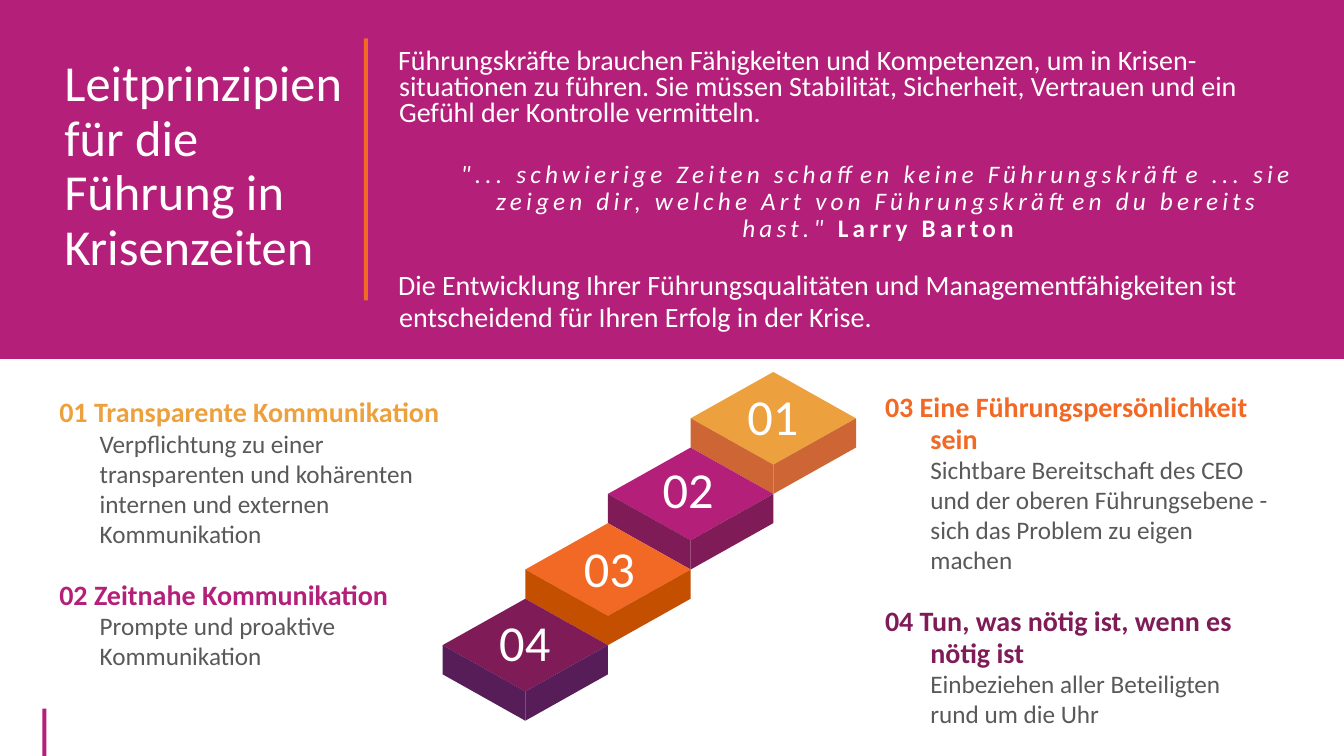
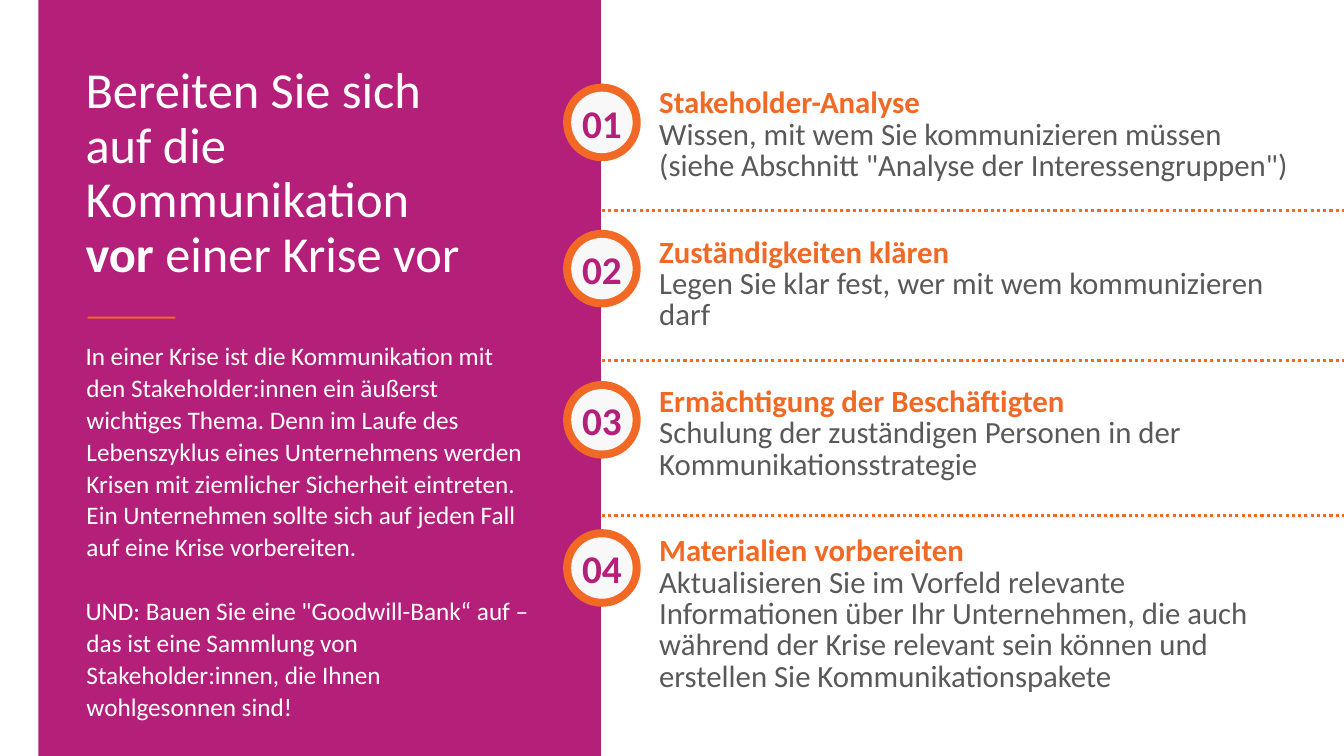
import pptx
import pptx.util
import pptx.dml.color
import pptx.enum.dml
import pptx.enum.shapes
import pptx.enum.text
import pptx.oxml.ns
from lxml import etree

Inches, Pt = pptx.util.Inches, pptx.util.Pt
Shape = pptx.enum.shapes.MSO_SHAPE
Align = pptx.enum.text.PP_ALIGN
Anchor = pptx.enum.text.MSO_ANCHOR

# Shared look
WIDE, HIGH = 13.33, 7.5
HUES = {
    "pink": "B41F7A", "plum": "7F1C58", "dark": "571D58",
    "orange": "F16924", "rust": "C44F00", "gold": "EDA13E",
    "brick": "CD6634", "gray": "595959", "pale": "F8F8F8", "white": "FFFFFF",
}
TITLE = {"size": Pt(36)}
ROW = {"line_spacing": 0.9}


def hue(name):
    return pptx.dml.color.RGBColor.from_string(HUES[name])


def apply(item, attrs):
    for key, value in attrs.items():
        setattr(item, key, value)


# Text parts: a run is (words, font, hue, spacing), a line is (runs, format, indent)
def run(words, tint="white", gap=None, **font):
    return words, font, tint, gap


def line(runs, hang=None, **form):
    return runs, form, hang


def write(frame, lines):
    for num, (runs, form, hang) in enumerate(lines):
        para = frame.paragraphs[0] if num == 0 else frame.add_paragraph()
        if hang:
            props = para._p.get_or_add_pPr()
            props.set("marL", str(Inches(hang[0])))
            props.set("indent", str(Inches(hang[1])))
        apply(para, form)
        for words, font, tint, gap in runs:
            part = para.add_run()
            part.text = words
            apply(part.font, {"name": "Calibri", **font})
            part.font.color.rgb = hue(tint)
            if gap:
                part._r.get_or_add_rPr().set("spc", str(gap * 100))


def text(slide, box, lines):
    frame = slide.shapes.add_textbox(*map(Inches, box)).text_frame
    frame.word_wrap = True
    write(frame, lines)


# Drawn parts
def paint(shape, tint):
    shape.shadow.inherit = False
    shape.fill.solid()
    shape.fill.fore_color.rgb = hue(tint)
    shape.line.fill.background()
    return shape


def block(slide, box, tint, kind=Shape.RECTANGLE):
    return paint(slide.shapes.add_shape(kind, *map(Inches, box)), tint)


def face(slide, points, tint):
    spots = [(Inches(x), Inches(y)) for x, y in points]
    pen = slide.shapes.build_freeform(*spots[0], scale=1.0)
    pen.add_line_segments(spots[1:], close=True)
    paint(pen.convert_to_shape(), tint)


def cube(slide, x, y, top, side):
    half, rise, deep = 0.82, 0.46, 0.29
    left, right = (x - half, y + rise), (x + half, y + rise)
    front = (x, y + 2 * rise)
    face(slide, [(x, y), right, front, left], top)
    for edge in (left, right):
        face(slide, [edge, front, (x, front[1] + deep), (edge[0], edge[1] + deep)], side)


def dots(slide, y):
    rule = slide.shapes.add_connector(
        pptx.enum.shapes.MSO_CONNECTOR.STRAIGHT,
        Inches(5.97), Inches(y), Inches(WIDE), Inches(y))
    apply(rule.line, {"width": Pt(2.25),
                      "dash_style": pptx.enum.dml.MSO_LINE.ROUND_DOT})
    rule.line.color.rgb = hue("orange")
    etree.SubElement(rule._element.spPr, pptx.oxml.ns.qn("a:effectLst"))


def badge(slide, y, mark):
    size, rim = 0.77, 0.08
    left = 5.97 - size / 2
    block(slide, (left, y, size, size), "orange", Shape.OVAL)
    core = size - 2 * rim
    disc = block(slide, (left + rim, y + rim, core, core), "pale", Shape.OVAL)
    apply(disc.text_frame, {
        "margin_left": 0, "margin_right": 0, "margin_top": 0, "margin_bottom": 0,
        "word_wrap": False, "vertical_anchor": Anchor.MIDDLE})
    write(disc.text_frame, [line([run(mark, "pink", size=Pt(28), bold=True)],
                                 alignment=Align.CENTER)])


def points(slide, box, items, hang):
    lines = []
    for num, (head, tint, body) in enumerate(items):
        lines += [
            line([run(head, tint, size=Pt(20), bold=True)], (hang, -hang),
                 line_spacing=Pt(22.4), space_before=Pt(22.4 if num else 0)),
            line([run(body, "gray", size=Pt(18))], (hang, 0), line_spacing=Pt(21.4)),
        ]
    text(slide, box, lines)


def start(deck):
    slide = deck.slides.add_slide(deck.slide_layouts[6])
    block(slide, (0.42, 7.03, 0.04, 0.47), "pink")
    return slide


# Slide 1: guiding principles
def guide(deck):
    slide = start(deck)
    block(slide, (0, 0, WIDE, 3.56), "pink")
    hang = (0.01, -0.01)
    text(slide, (3.85, 0.44, 9.21, 3.1), [
        line([run("Führungskräfte brauchen Fähigkeiten und Kompetenzen, um in "
                  "Krisen-situationen zu führen. Sie müssen Stabilität, Sicherheit, "
                  "Vertrauen und ein Gefühl der Kontrolle vermitteln.", size=Pt(20))],
             hang, line_spacing=Pt(18.8)),
        line([run("\"... schwierige Zeiten schaffen keine Führungskräfte ... sie zeigen "
                  "dir, welche Art von Führungskräften du bereits hast.\" ",
                  gap=3, size=Pt(18), italic=True),
              run("Larry Barton", gap=3, size=Pt(18), bold=True)],
             (0.51, -0.01), alignment=Align.CENTER, space_before=Pt(23.8), **ROW),
        line([run("Die Entwicklung Ihrer Führungsqualitäten und Managementfähigkeiten "
                  "ist entscheidend für Ihren Erfolg in der Krise.", size=Pt(20))],
             hang, line_spacing=Pt(22.8), space_before=Pt(18.8)),
    ])
    text(slide, (0.54, 0.53, 3.03, 2.3), [
        line([run("Leitprinzipien für die Führung in Krisenzeiten", **TITLE)], **ROW)])
    block(slide, (3.61, 0.38, 0.04, 2.6), "orange")

    points(slide, (0.49, 3.89, 4.03, 3.1), [
        ("01 Transparente Kommunikation", "gold",
         "Verpflichtung zu einer transparenten und kohärenten internen und externen "
         "Kommunikation"),
        ("02 Zeitnahe Kommunikation", "pink", "Prompte und proaktive Kommunikation"),
    ], 0.4)
    points(slide, (8.68, 3.84, 4.03, 3.41), [
        ("03 Eine Führungspersönlichkeit sein", "orange",
         "Sichtbare Bereitschaft des CEO und der oberen Führungsebene - sich das "
         "Problem zu eigen machen"),
        ("04 Tun, was nötig ist, wenn es nötig ist", "plum",
         "Einbeziehen aller Beteiligten rund um die Uhr"),
    ], 0.45)

    # Stairs of cubes, each with its number
    stairs = [("gold", "brick", 7.19, 3.84), ("pink", "plum", 6.35, 4.56),
              ("orange", "rust", 5.57, 5.35), ("plum", "dark", 4.73, 6.08)]
    for num, (top, side, _, _) in enumerate(stairs):
        cube(slide, 7.67 - 0.82 * num, 3.69 + 0.75 * num, top, side)
    for num, (_, _, x, y) in enumerate(stairs, 1):
        text(slide, (x, y, 0.95, 0.8), [
            line([run(f"{num:02}", **TITLE)], alignment=Align.CENTER, **ROW)])


# Slide 2: getting ready
def ready(deck):
    slide = start(deck)
    tasks = [
        ("Stakeholder-Analyse",
         "Wissen, mit wem Sie kommunizieren müssen (siehe Abschnitt \"Analyse der "
         "Interessengruppen\")"),
        ("Zuständigkeiten klären", "Legen Sie klar fest, wer mit wem kommunizieren darf"),
        ("Ermächtigung der Beschäftigten",
         "Schulung der zuständigen Personen in der Kommunikationsstrategie"),
        ("Materialien vorbereiten",
         "Aktualisieren Sie im Vorfeld relevante Informationen über Ihr Unternehmen, "
         "die auch während der Krise relevant sein können und erstellen Sie "
         "Kommunikationspakete"),
    ]
    lines = []
    for num, (head, body) in enumerate(tasks):
        lines += [
            line([run(head, "orange", size=Pt(22), bold=True)],
                 line_spacing=Pt(22.4), space_before=Pt(39.5 if num else 0)),
            line([run(body, "gray", size=Pt(22))], line_spacing=Pt(22.4)),
        ]
    text(slide, (6.44, 0.83, 6.47, 6.4), lines)

    # Side panel
    block(slide, (0.38, 0, 5.58, HIGH), "pink")
    text(slide, (0.75, 0.6, 4, 2.4), [
        line([run("Bereiten Sie sich auf die Kommunikation ", **TITLE),
              run("vor ", bold=True, **TITLE),
              run("einer Krise vor", **TITLE)], **ROW)])
    block(slide, (0.87, 3.14, 0.87, 0.02), "orange")
    notes = [
        "In einer Krise ist die Kommunikation mit den Stakeholder:innen ein äußerst "
        "wichtiges Thema. Denn im Laufe des Lebenszyklus eines Unternehmens werden "
        "Krisen mit ziemlicher Sicherheit eintreten. Ein Unternehmen sollte sich auf "
        "jeden Fall auf eine Krise vorbereiten.",
        "UND: Bauen Sie eine \"Goodwill-Bank“ auf – das ist eine Sammlung von "
        "Stakeholder:innen, die Ihnen wohlgesonnen sind!",
    ]
    text(slide, (0.75, 3.31, 4.6, 3.9), [
        line([run(note, size=Pt(18))], (0.01, -0.01), line_spacing=Pt(22.8),
             space_before=Pt(22.8 if num else 0))
        for num, note in enumerate(notes)])

    # Rules and badges
    for y in (2.09, 3.58, 5.11):
        dots(slide, y)
    for num, y in enumerate((0.83, 2.28, 3.78, 5.25), 1):
        badge(slide, y, f"{num:02}")


def main():
    deck = pptx.Presentation()
    apply(deck, {"slide_width": Inches(WIDE), "slide_height": Inches(HIGH)})
    guide(deck)
    ready(deck)
    deck.save("out.pptx")


if __name__ == "__main__":
    main()
